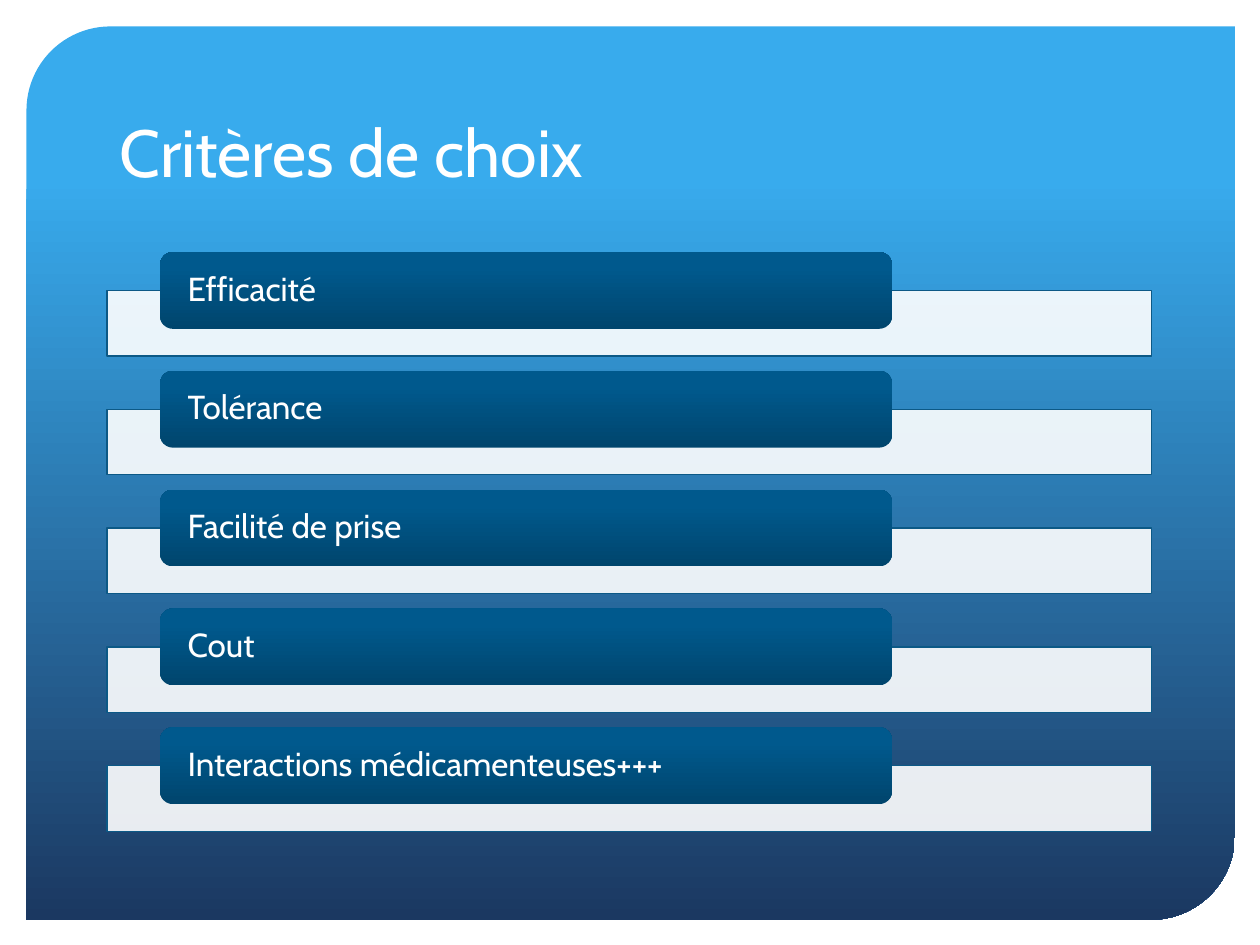
from dataclasses import dataclass

from lxml import etree
from pptx import Presentation
from pptx.dml.color import RGBColor
from pptx.enum.shapes import MSO_SHAPE
from pptx.enum.text import MSO_ANCHOR, PP_ALIGN
from pptx.oxml.ns import qn
from pptx.util import Inches, Pt

RECTANGLE = MSO_SHAPE.RECTANGLE
ROUNDED = MSO_SHAPE.ROUNDED_RECTANGLE
DIAGONAL_ROUNDED = MSO_SHAPE.ROUND_2_DIAG_RECTANGLE
MIDDLE, BOTTOM = MSO_ANCHOR.MIDDLE, MSO_ANCHOR.BOTTOM
LEFT = PP_ALIGN.LEFT

TITLE = "Critères de choix"
CRITERIA = [
    "Efficacité",
    "Tolérance",
    "Facilité de prise",
    "Cout",
    "Interactions médicamenteuses+++",
]


@dataclass(frozen=True)
class Theme:
    font: str = "Cabin"
    title_size: int = 38
    label_size: int = 19
    white: str = "FFFFFF"
    bar_line: str = "0C5986"
    bar_opacity: int = 90
    panel_stops: tuple = ((17, "38ABED"), (100, "1B3861"))
    label_stops: tuple = ((0, "00456D"), (80, "00598D"), (100, "005A8E"))


THEME = Theme()

PANEL = (0.21, 0.21, 9.59, 7.09)
TITLE_BOX = (0.85, 0.42, 8.29, 1.14)
BAR_LEFT, BAR_WIDTH, BAR_HEIGHT = 0.85, 8.29, 0.52
LABEL_LEFT, LABEL_WIDTH, LABEL_HEIGHT = 1.27, 5.81, 0.61
FIRST_LABEL_TOP, ROW_PITCH = 2.0, 0.943


def add_shape(slide, kind, box):
    shape = slide.shapes.add_shape(kind, *map(Inches, box))
    shape.shadow.inherit = False
    shape.line.fill.background()
    return shape


def fill_gradient(shape, stops, angle):
    """Fill with (percent, colour) stops; angle is counter-clockwise in degrees."""
    shape.fill.gradient()
    shape.fill.gradient_angle = angle
    stop_list = shape.element.spPr.find(qn("a:gradFill")).find(qn("a:gsLst"))
    for old_stop in list(stop_list):
        stop_list.remove(old_stop)
    for percent, color in stops:
        stop = etree.SubElement(stop_list, qn("a:gs"), pos=str(percent * 1000))
        etree.SubElement(stop, qn("a:srgbClr"), val=color)


def fill_translucent(shape, color, opacity):
    shape.fill.solid()
    shape.fill.fore_color.rgb = RGBColor.from_string(color)
    color_element = shape.element.spPr.find(qn("a:solidFill"))[0]
    etree.SubElement(color_element, qn("a:alpha"), val=str(opacity * 1000))


def write_text(shape, text, *, size, anchor, side_margin=0.1, end_margin=0.05,
               line_spacing=1.0):
    frame = shape.text_frame
    frame.word_wrap = True
    frame.vertical_anchor = anchor
    frame.margin_left = frame.margin_right = Inches(side_margin)
    frame.margin_top = frame.margin_bottom = Inches(end_margin)
    paragraph = frame.paragraphs[0]
    paragraph.text = text
    paragraph.alignment = LEFT
    paragraph.line_spacing = line_spacing
    paragraph.font.name = THEME.font
    paragraph.font.size = Pt(size)
    paragraph.font.color.rgb = RGBColor.from_string(THEME.white)


def add_criterion(slide, text, label_top):
    label_middle = label_top + LABEL_HEIGHT / 2
    bar = add_shape(slide, RECTANGLE,
                    (BAR_LEFT, label_middle, BAR_WIDTH, BAR_HEIGHT))
    fill_translucent(bar, THEME.white, THEME.bar_opacity)
    bar.line.color.rgb = RGBColor.from_string(THEME.bar_line)
    bar.line.width = Pt(0.75)

    label = add_shape(slide, ROUNDED,
                      (LABEL_LEFT, label_top, LABEL_WIDTH, LABEL_HEIGHT))
    fill_gradient(label, THEME.label_stops, 90)
    write_text(label, text, size=THEME.label_size, anchor=MIDDLE,
               side_margin=0.19, end_margin=0, line_spacing=0.9)


def main():
    presentation = Presentation()
    presentation.slide_width = Inches(10)
    presentation.slide_height = Inches(7.5)
    slide = presentation.slides.add_slide(presentation.slide_layouts[6])

    panel = add_shape(slide, DIAGONAL_ROUNDED, PANEL)
    panel.adjustments[0] = 0.094
    fill_gradient(panel, THEME.panel_stops, 270)

    title = slide.shapes.add_textbox(*map(Inches, TITLE_BOX))
    write_text(title, TITLE, size=THEME.title_size, anchor=BOTTOM)

    for row, criterion in enumerate(CRITERIA):
        add_criterion(slide, criterion, FIRST_LABEL_TOP + row * ROW_PITCH)

    presentation.save("out.pptx")


if __name__ == "__main__":
    main()
